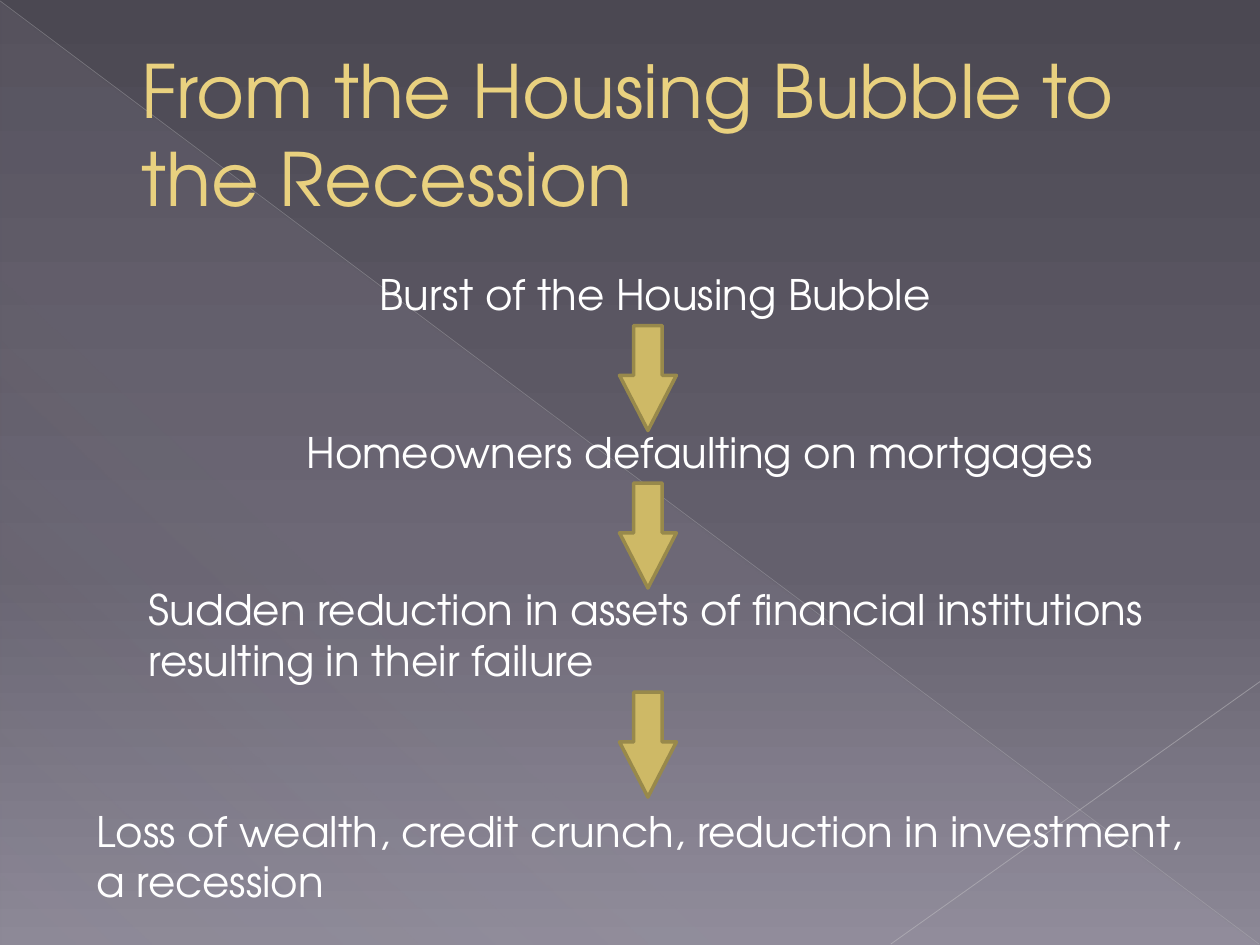
from dataclasses import dataclass

from lxml import etree
from pptx import Presentation
from pptx.dml.color import RGBColor
from pptx.enum.shapes import MSO_CONNECTOR, MSO_SHAPE
from pptx.enum.text import MSO_ANCHOR, MSO_AUTO_SIZE, PP_ALIGN
from pptx.oxml.ns import qn
from pptx.util import Pt

STRAIGHT = MSO_CONNECTOR.STRAIGHT
TRIANGLE, DOWN_ARROW = MSO_SHAPE.RIGHT_TRIANGLE, MSO_SHAPE.DOWN_ARROW
MIDDLE, TOP = MSO_ANCHOR.MIDDLE, MSO_ANCHOR.TOP
LEFT = PP_ALIGN.LEFT
GROW, FIXED = MSO_AUTO_SIZE.SHAPE_TO_FIT_TEXT, MSO_AUTO_SIZE.NONE


@dataclass(frozen=True)
class Theme:
    font: str = "TeX Gyre Adventor"
    title_size: float = 42
    body_size: float = 24
    title: str = "E9D17F"
    title_outline: str = "8F8047"
    body: str = "FFFFFF"
    arrow: str = "CEB966"
    arrow_line: str = "98894B"
    long_line: str = "C0BFC2"
    short_line: str = "C7C6C8"
    # Gradient stops: position, colour, opacity in percent
    background: tuple = ((0, "4B4852", 100), (60, "64606D", 100), (100, "8C8896", 100))
    sheen: tuple = ((0, "C9C2D1", 10), (70, "C9C2D1", 8), (100, "C9C2D1", 1))


THEME = Theme()

# Left, top, width, height, wrap, text
STEPS = (
    (210, 150, 332, 36, False, "Burst of the Housing Bubble"),
    (168, 240, 468, 36, False, "Homeowners defaulting on mortgages"),
    (78, 330, 588, 65.5, True,
     "Sudden reduction in assets of financial institutions resulting in their failure"),
    (48, 456.5, 648, 65.5, True,
     "Loss of wealth, credit crunch, reduction in investment, a recession"),
)
ARROW_LEFT, ARROW_WIDTH, ARROW_HEIGHT = 354, 32.5, 60


def rgb(colour):
    return RGBColor.from_string(colour)


def set_opacity(colour_element, percent):
    alpha = etree.SubElement(colour_element, qn("a:alpha"))
    alpha.set("val", str(percent * 1000))


def set_gradient(fill, properties, stops, angle):
    """Give the fill in a properties element several stops, angle clockwise."""
    fill.solid()
    gradient = etree.Element(qn("a:gradFill"), rotWithShape="1")
    stop_list = etree.SubElement(gradient, qn("a:gsLst"))
    for position, colour, opacity in stops:
        stop = etree.SubElement(stop_list, qn("a:gs"), pos=str(position * 1000))
        set_opacity(etree.SubElement(stop, qn("a:srgbClr"), val=colour), opacity)
    etree.SubElement(gradient, qn("a:lin"), ang=str(angle * 60000), scaled="0")
    properties.replace(properties.find(qn("a:solidFill")), gradient)


def add_line(slide, start, end, colour, width, opacity):
    line = slide.shapes.add_connector(STRAIGHT, *map(Pt, start + end))
    line.line.width = Pt(width)
    line.line.color.rgb = rgb(colour)
    properties = line.element.spPr
    set_opacity(next(properties.iter(qn("a:srgbClr"))), opacity)
    etree.SubElement(properties, qn("a:effectLst"))


def add_text(slide, box, text, size, colour, wrap=True, anchor=TOP, auto_size=GROW):
    shape = slide.shapes.add_textbox(*map(Pt, box))
    frame = shape.text_frame
    frame.word_wrap, frame.auto_size, frame.vertical_anchor = wrap, auto_size, anchor
    paragraph = frame.paragraphs[0]
    paragraph.alignment = LEFT
    run = paragraph.add_run()
    run.text = text
    run.font.name = THEME.font
    run.font.size = Pt(size)
    run.font.color.rgb = rgb(colour)
    return paragraph, run


def add_title(slide, text):
    paragraph, run = add_text(slide, (36, 21, 648, 110), text, THEME.title_size,
                              THEME.title, anchor=MIDDLE, auto_size=FIXED)
    paragraph_properties = paragraph._p.get_or_add_pPr()
    paragraph_properties.set("marL", str(Pt(38)))
    paragraph_properties.set("indent", "0")
    # Thin outline around the letters
    outline = etree.Element(qn("a:ln"), w=str(Pt(0.5)))
    fill = etree.SubElement(outline, qn("a:solidFill"))
    etree.SubElement(fill, qn("a:srgbClr"), val=THEME.title_outline)
    run._r.get_or_add_rPr().insert(0, outline)


def add_arrow(slide, top):
    box = (ARROW_LEFT, top, ARROW_WIDTH, ARROW_HEIGHT)
    arrow = slide.shapes.add_shape(DOWN_ARROW, *map(Pt, box))
    arrow.shadow.inherit = False
    arrow.adjustments[0] = 0.5
    arrow.adjustments[1] = 0.97
    arrow.fill.solid()
    arrow.fill.fore_color.rgb = rgb(THEME.arrow)
    arrow.line.color.rgb = rgb(THEME.arrow_line)
    arrow.line.width = Pt(2)


def add_backdrop(slide):
    fill = slide.background.fill
    fill.solid()
    background = next(slide.element.iter(qn("p:bgPr")))
    set_gradient(fill, background, THEME.background, 90)

    triangle = slide.shapes.add_shape(TRIANGLE, Pt(0.5), Pt(1), Pt(719), Pt(539))
    triangle.shadow.inherit = False
    triangle.line.fill.background()
    set_gradient(triangle.fill, triangle.element.spPr, THEME.sheen, 133)

    add_line(slide, (0, 0.5), (719.5, 539.5), THEME.long_line, 0.39, 35)
    add_line(slide, (720, 389.5), (509, 539.5), THEME.short_line, 0.47, 45)


def main():
    presentation = Presentation()
    presentation.slide_width, presentation.slide_height = Pt(720), Pt(540)
    slide = presentation.slides.add_slide(presentation.slide_layouts[6])

    add_backdrop(slide)
    add_title(slide, "From the Housing Bubble to the Recession")

    # Chain of events, an arrow below each step but the last
    for left, top, width, height, wrap, text in STEPS:
        add_text(slide, (left, top, width, height), text,
                 THEME.body_size, THEME.body, wrap)
    for _, top, _, height, _, _ in STEPS[:-1]:
        add_arrow(slide, top + height)

    presentation.save("out.pptx")


if __name__ == "__main__":
    main()
